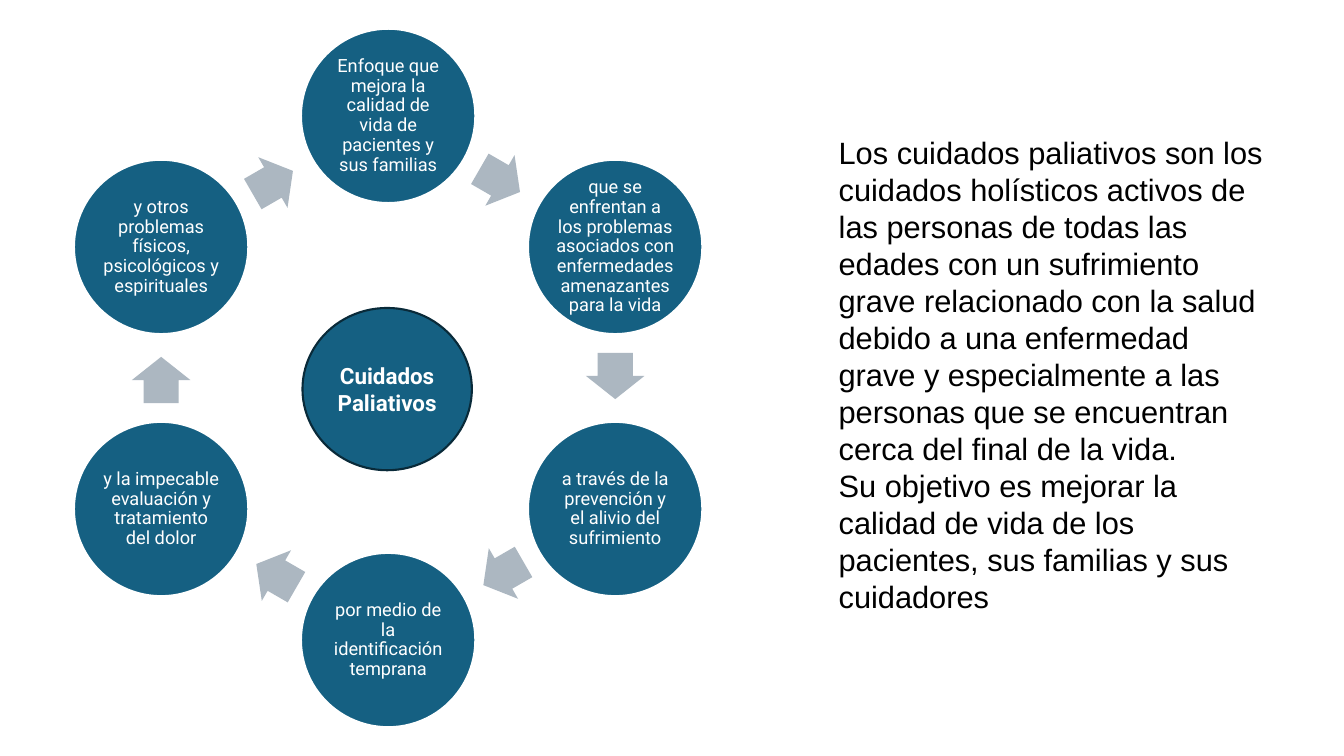
from dataclasses import dataclass
from math import cos, radians, sin

from pptx import Presentation
from pptx.dml.color import RGBColor
from pptx.enum.shapes import MSO_SHAPE
from pptx.enum.text import MSO_ANCHOR, MSO_AUTO_SIZE, PP_ALIGN
from pptx.util import Inches, Pt

OVAL, ARROW = MSO_SHAPE.OVAL, MSO_SHAPE.RIGHT_ARROW
MIDDLE, CENTER, LEFT = MSO_ANCHOR.MIDDLE, PP_ALIGN.CENTER, PP_ALIGN.LEFT


@dataclass(frozen=True)
class Theme:
    blue: RGBColor = RGBColor(0x15, 0x60, 0x82)
    navy: RGBColor = RGBColor(0x09, 0x2A, 0x39)
    gray: RGBColor = RGBColor(0xAC, 0xB7, 0xC1)
    white: RGBColor = RGBColor(0xFF, 0xFF, 0xFF)
    black: RGBColor = RGBColor(0, 0, 0)
    step: Pt = Pt(13)
    hub: Pt = Pt(16)
    body: Pt = Pt(22)


theme = Theme()
STEPS = [
    "Enfoque que mejora la calidad de vida de pacientes y sus familias",
    "que se enfrentan a los problemas asociados con enfermedades amenazantes para la vida",
    "a través de la prevención y el alivio del sufrimiento",
    "por medio de la identificación temprana",
    "y la impecable evaluación y tratamiento del dolor",
    "y otros problemas físicos, psicológicos y espirituales",
]
BODY = [
    "Los cuidados paliativos son los cuidados holísticos activos de las personas "
    "de todas las edades con un sufrimiento grave relacionado con la salud debido "
    "a una enfermedad grave y especialmente a las personas que se encuentran "
    "cerca del final de la vida.",
    "Su objetivo es mejorar la calidad de vida de los pacientes, sus familias "
    "y sus cuidadores",
]


def add_form(shapes, kind, mid, size, fill, line=None):
    """Add a flat shape centred on mid, in inches."""
    (x, y), (w, h) = mid, size
    form = shapes.add_shape(
        kind, Inches(x - w / 2), Inches(y - h / 2), Inches(w), Inches(h))
    form.shadow.inherit = False
    form.fill.solid()
    form.fill.fore_color.rgb = fill
    if line is None:
        form.line.fill.background()
    else:
        form.line.color.rgb = line
        form.line.width = Pt(1.5)
    return form


def write(frame, lines, align, color, spacing=1.0, **style):
    """Fill a text frame with one paragraph per line; style sets the font."""
    frame.word_wrap = True
    for i, line in enumerate(lines):
        para = frame.add_paragraph() if i else frame.paragraphs[0]
        para.alignment = align
        para.line_spacing = spacing
        run = para.add_run()
        run.text = line
        run.font.color.rgb = color
        for key, value in style.items():
            setattr(run.font, key, value)


prs = Presentation()
prs.slide_width, prs.slide_height = Inches(13.33), Inches(7.5)
slide = prs.slides.add_slide(prs.slide_layouts[6])

# Ring of steps, clockwise from the top, each followed by an arrow
MID_X, MID_Y, RADIUS = 3.85, 3.75, 2.6
TURN = 360 / len(STEPS)
GAP = RADIUS * cos(radians(TURN / 2))
BACK = 0.02  # arrows sit slightly nearer the step they leave
ring = slide.shapes.add_group_shape().shapes

for i, text in enumerate(STEPS):
    angle = radians(i * TURN - 90)
    mid = MID_X + RADIUS * cos(angle), MID_Y + RADIUS * sin(angle)
    step = add_form(ring, OVAL, mid, (1.73, 1.73), theme.blue, theme.white)
    frame = step.text_frame
    frame.vertical_anchor = MIDDLE
    for side in ("left", "top", "right", "bottom"):
        setattr(frame, f"margin_{side}", Inches(0.02))
    write(frame, [text], CENTER, theme.white, 0.9, name="Roboto", size=theme.step)

    course = (i + 0.5) * TURN
    angle, ahead = radians(course - 90), radians(course)
    mid = (MID_X + GAP * cos(angle) - BACK * cos(ahead),
           MID_Y + GAP * sin(angle) - BACK * sin(ahead))
    arrow = add_form(ring, ARROW, mid, (0.46, 0.58), theme.gray)
    arrow.adjustments[0], arrow.adjustments[1] = 0.6, 0.5
    arrow.rotation = course

hub = add_form(slide.shapes, OVAL, (3.84, 3.86), (1.68, 1.61), theme.blue, theme.navy)
hub.text_frame.vertical_anchor = MIDDLE
write(hub.text_frame, ["Cuidados", "Paliativos"], CENTER, theme.white,
      name="Roboto", size=theme.hub, bold=True)

body = slide.shapes.add_textbox(Inches(8.22), Inches(1.28), Inches(4.46), Inches(4.91))
body.text_frame.auto_size = MSO_AUTO_SIZE.SHAPE_TO_FIT_TEXT
write(body.text_frame, BODY, LEFT, theme.black, name="Arial", size=theme.body)

prs.save("out.pptx")
